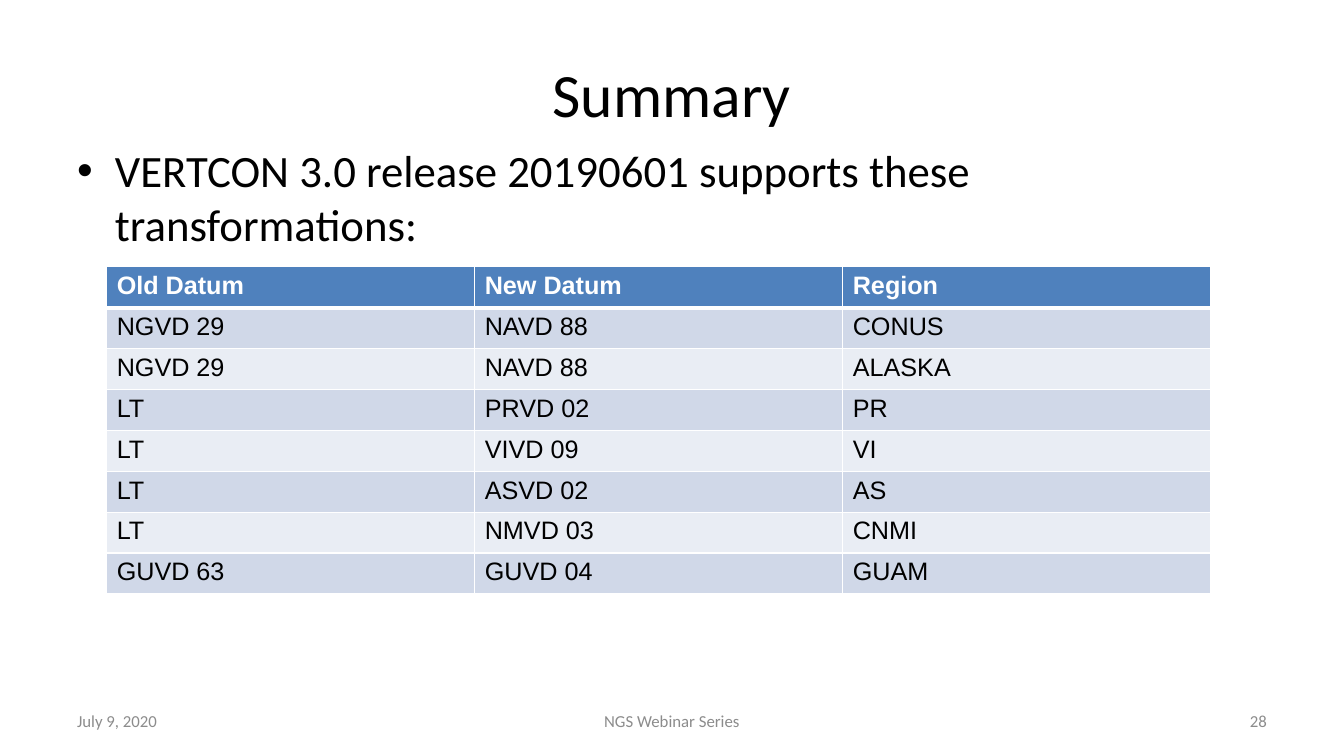
from dataclasses import dataclass

from lxml.etree import SubElement
from pptx import Presentation
from pptx.dml.color import RGBColor as Rgb
from pptx.enum.text import MSO_ANCHOR as Anchor, PP_ALIGN as Align
from pptx.oxml.ns import qn
from pptx.util import Pt

COLORS = {
    "text": "000000",
    "footer": "8C8C8C",
    "white": "FFFFFF",
    "header": "4F81BD",
    "odd": "D0D8E8",
    "even": "E9EDF4",
}
DATUMS = [
    ("Old Datum", "New Datum", "Region"),
    ("NGVD 29", "NAVD 88", "CONUS"),
    ("NGVD 29", "NAVD 88", "ALASKA"),
    ("LT", "PRVD 02", "PR"),
    ("LT", "VIVD 09", "VI"),
    ("LT", "ASVD 02", "AS"),
    ("LT", "NMVD 03", "CNMI"),
    ("GUVD 63", "GUVD 04", "GUAM"),
]
COLUMN_WIDTH, ROW_HEIGHT = 262.9, 29.2


@dataclass(frozen=True)
class Passage:
    text: str
    left: float
    top: float
    width: float
    height: float
    size: float
    align: Align = Align.LEFT
    anchor: Anchor = Anchor.MIDDLE
    color: str = "text"
    bullet: bool = False


TITLE = Passage("Summary", 48, 21.6, 864, 90, 44, Align.CENTER)
PASSAGES = [
    Passage("VERTCON 3.0 release 20190601 supports these transformations:",
            48, 98.6, 864, 356.4, 32, anchor=Anchor.TOP, bullet=True),
    Passage("July 9, 2020", 48, 500.5, 224, 28.75, 12, color="footer"),
    Passage("NGS Webinar Series", 328, 500.5, 304, 28.75, 12, Align.CENTER, color="footer"),
    Passage("28", 688, 500.5, 224, 28.75, 12, Align.RIGHT, color="footer"),
]


def format_font(font, color: str, **values) -> None:
    """Apply the format values and a named colour to a font."""
    for attribute, value in values.items():
        setattr(font, attribute, value)
    font.color.rgb = Rgb.from_string(COLORS[color])


def add_bullet(paragraph) -> None:
    """Give a paragraph a hanging round bullet."""
    properties = paragraph._p.get_or_add_pPr()
    properties.set("marL", str(Pt(27)))
    properties.set("indent", str(Pt(-27)))
    SubElement(properties, qn("a:buFont"), typeface="Arial")
    SubElement(properties, qn("a:buChar"), char="•")


def fill_passage(holder, passage: Passage) -> None:
    """Place a text holder and write its passage."""
    for side in ("left", "top", "width", "height"):
        setattr(holder, side, Pt(getattr(passage, side)))
    frame = holder.text_frame
    frame.word_wrap = True
    frame.vertical_anchor = passage.anchor
    frame.text = passage.text
    paragraph = frame.paragraphs[0]
    paragraph.alignment = passage.align
    if passage.bullet:
        add_bullet(paragraph)
    format_font(paragraph.runs[0].font, passage.color, name="Calibri", size=Pt(passage.size))


def add_borders(cell, widths: dict[str, float]) -> None:
    """Draw white borders of the given widths around a cell."""
    properties = cell._tc.get_or_add_tcPr()
    for edge, width in widths.items():
        line = SubElement(properties, qn(f"a:ln{edge}"), w=str(Pt(width)))
        fill = SubElement(line, qn("a:solidFill"))
        SubElement(fill, qn("a:srgbClr"), val=COLORS["white"])


def add_datum_table(slide) -> None:
    """Add the table of supported datum transformations."""
    rows, columns = len(DATUMS), len(DATUMS[0])
    table = slide.shapes.add_table(
        rows, columns, Pt(76.2), Pt(190.6),
        Pt(columns * COLUMN_WIDTH), Pt(rows * ROW_HEIGHT)).table
    for row, datums in enumerate(DATUMS):
        is_header = row == 0
        band = "header" if is_header else "odd" if row % 2 else "even"
        for column, datum in enumerate(datums):
            cell = table.cell(row, column)
            cell.text = datum
            add_borders(cell, {"L": 1, "R": 1, "T": 3 if row == 1 else 1,
                               "B": 3 if is_header else 1})
            cell.fill.solid()
            cell.fill.fore_color.rgb = Rgb.from_string(COLORS[band])
            format_font(cell.text_frame.paragraphs[0].runs[0].font,
                        "white" if is_header else "text",
                        name="Arial", size=Pt(18), bold=is_header)


def main() -> None:
    """Build the summary slide and save it."""
    deck = Presentation()
    deck.slide_width, deck.slide_height = Pt(960), Pt(540)
    slide = deck.slides.add_slide(deck.slide_layouts[5])
    fill_passage(slide.shapes.title, TITLE)
    for passage in PASSAGES:
        fill_passage(slide.shapes.add_textbox(0, 0, 0, 0), passage)
    add_datum_table(slide)
    deck.save("out.pptx")


if __name__ == "__main__":
    main()
